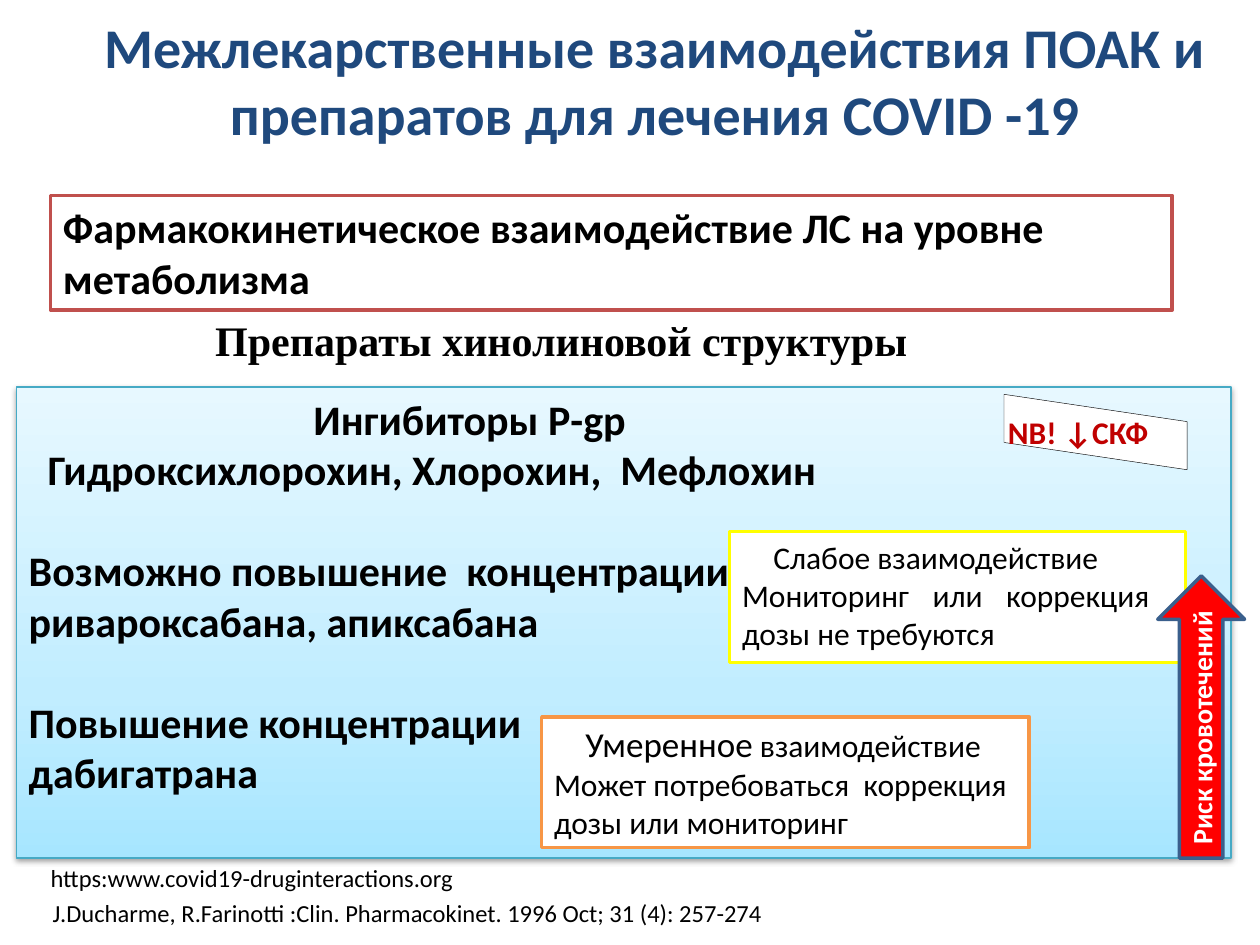
from copy import deepcopy
from lxml.etree import SubElement
from pptx import Presentation
from pptx.dml.color import RGBColor
from pptx.enum.shapes import MSO_SHAPE as SHAPE
from pptx.enum.text import MSO_ANCHOR as ANCHOR, PP_ALIGN as ALIGN
from pptx.oxml.ns import qn
from pptx.util import Cm, Pt


def rgb(value):
    return RGBColor.from_string(value)


class SlideBuilder:
    """Holds the text style and the slide being drawn."""
    base = {"name": "Calibri", "size": 24, "bold": False, "color": "000000"}

    def __init__(self, prs):
        self.s = prs.slides.add_slide(prs.slide_layouts[5])

    def add_run(self, p, text, **style):
        r = p.add_run()
        r.text = text
        fmt = {**self.base, **style}
        r.font.color.rgb = rgb(fmt.pop("color"))
        fmt["size"] = Pt(fmt["size"])
        for key, value in fmt.items():
            setattr(r.font, key, value)

    def fill_text(self, sp, paras, anchor=ANCHOR.TOP, margins=None, **style):
        """Each paragraph is (runs, format); each run is (text, style)."""
        tf = sp.text_frame
        frame = {"word_wrap": True, "vertical_anchor": anchor, **(margins or {})}
        for key, value in frame.items():
            setattr(tf, key, value)
        for i, (runs, fmt) in enumerate(paras):
            p = tf.add_paragraph() if i else tf.paragraphs[0]
            fmt = {"alignment": ALIGN.LEFT, **fmt}
            indent = fmt.pop("indent", 0)
            for key, value in fmt.items():
                setattr(p, key, value)
            if indent:
                p._p.get_or_add_pPr().set("indent", str(Cm(indent)))
            for text, own in runs:
                self.add_run(p, text, **{**style, **own})
        return sp

    def paint(self, sp, fill, line, width):
        sp.shadow.inherit = False
        if fill:
            sp.fill.solid()
            sp.fill.fore_color.rgb = rgb(fill)
        sp.line.color.rgb = rgb(line)
        sp.line.width = Pt(width)

    def title(self, box, text, **style):
        sp = self.s.shapes.title
        for key, value in zip(("left", "top", "width", "height"), box):
            setattr(sp, key, Cm(value))
        self.fill_text(sp, [([(text, {})], {"alignment": ALIGN.CENTER})],
                       ANCHOR.MIDDLE, **style)

    def text(self, box, text, anchor=ANCHOR.TOP, margins=None, **style):
        sp = self.s.shapes.add_textbox(*map(Cm, box))
        self.fill_text(sp, [([(text, {})], {})], anchor, margins, **style)

    def shape(self, kind, box, paras, fill, line, width=2, **options):
        sp = self.s.shapes.add_shape(kind, *map(Cm, box))
        self.paint(sp, fill, line, width)
        return self.fill_text(sp, paras, **options)

    def outline(self, points, paras, fill, line, width, **options):
        start, *rest = [(Cm(x), Cm(y)) for x, y in points]
        fb = self.s.shapes.build_freeform(*start)
        fb.add_line_segments(rest, close=True)
        sp = fb.convert_to_shape()
        self.paint(sp, fill, line, width)
        return self.fill_text(sp, paras, **options)

    def gradient(self, sp, colors, middle):
        """Three colours running from the bottom up."""
        sp.fill.gradient()
        sp.fill.gradient_angle = 90
        first = sp._element.spPr.find(".//" + qn("a:gs"))
        first.addnext(deepcopy(first))
        stops = sp.fill.gradient_stops
        for stop, color, pos in zip(stops, colors, (0, middle, 1)):
            stop.color.rgb = rgb(color)
            stop.position = pos

    def drop_shadow(self, sp, blur, dist, alpha):
        effects = sp._element.spPr.find(qn("a:effectLst"))
        shadow = SubElement(effects, qn("a:outerShdw"), blurRad=str(Pt(blur)),
                            dist=str(Pt(dist)), dir="5400000", rotWithShape="0")
        color = SubElement(shadow, qn("a:srgbClr"), val="000000")
        SubElement(color, qn("a:alpha"), val=str(alpha * 1000))


def line(text, **fmt):
    return [(text, {})], fmt


def main():
    prs = Presentation()
    prs.slide_width, prs.slide_height = Cm(25.4), Cm(19.05)
    b = SlideBuilder(prs)
    just = {"alignment": ALIGN.JUSTIFY}
    gap = {"space_before": Pt(29)}

    # Title and source address
    b.title((1.7, 0.41, 23.01, 2.39),
            "Межлекарственные взаимодействия ПОАК и препаратов для лечения COVID -19",
            size=32, bold=True, color="1F497D")
    no_margins = dict.fromkeys(
        ("margin_left", "margin_top", "margin_right", "margin_bottom"), 0)
    b.text((1.02, 17.3, 10.29, 0.69), "https:www.covid19-druginteractions.org",
           ANCHOR.BOTTOM, no_margins, size=14)

    # Main panel
    panel = b.shape(SHAPE.RECTANGLE, (0.33, 7.8, 24.49, 9.5), [
        line("Ингибиторы Р-gp", indent=5.74),
        line("Гидроксихлорохин, Хлорохин,  Мефлохин", indent=0.38),
        line("Возможно повышение  концентрации", **gap),
        line("ривароксабана, апиксабана"),
        line("Повышение концентрации", **gap),
        line("дабигатрана"),
    ], None, "46AAC5", 0.75, bold=True)
    b.gradient(panel, ("A7E6FF", "C1EDFF", "E7F8FF"), 0.35)
    b.drop_shadow(panel, 3.1, 1.6, 38)

    # Headings above the panel
    b.shape(SHAPE.RECTANGLE, (1.02, 3.94, 22.61, 2.31), [
        line("Фармакокинетическое взаимодействие ЛС на уровне", **just),
        line("метаболизма", **just),
    ], "FFFFFF", "C0504D", bold=True)
    b.text((4.09, 6.22, 17.6, 1.27), "Препараты хинолиновой структуры",
           name="Times New Roman", bold=True)

    # Interaction notes
    b.shape(SHAPE.RECTANGLE, (14.71, 10.72, 9.19, 2.64), [
        line("Слабое взаимодействие", indent=0.63, **just),
        line("Мониторинг или коррекция  дозы не требуются", **just),
    ], "FFFFFF", "FFFF00", size=18)
    b.shape(SHAPE.RECTANGLE, (10.92, 14.45, 9.83, 2.64), [
        ([("Умеренное", {"size": 20}), (" взаимодействие", {})],
         {"indent": 0.63, **just}),
        line("Может потребоваться  коррекция  дозы или мониторинг"),
    ], "FFFFFF", "F79646", size=18)

    # Slanted warning label
    b.outline([(20.24, 7.95), (23.93, 8.5), (23.93, 9.47), (20.24, 8.92)],
              [line("NB! ↓СКФ")], "FFFFFF", "000000", 0.25,
              anchor=ANCHOR.MIDDLE, margins={"margin_left": Cm(0.08)},
              size=18, bold=True, color="C00000")

    # Bleeding risk arrow
    arrow = b.shape(SHAPE.UP_ARROW, (23.34, 11.61, 1.75, 5.69),
                    [line("Риск кровотечений", alignment=ALIGN.CENTER)],
                    "FF0000", "3A5F8C", anchor=ANCHOR.MIDDLE,
                    size=16, bold=True, color="FFFFFF")
    arrow.text_frame._txBody.bodyPr.set("vert", "vert270")

    # Reference
    b.text((0.81, 17.98, 14.99, 0.86),
           "J.Ducharme, R.Farinotti :Clin. Pharmacokinet. 1996 Oct; 31 (4): 257-274",
           size=14)

    prs.save("out.pptx")


if __name__ == "__main__":
    main()
